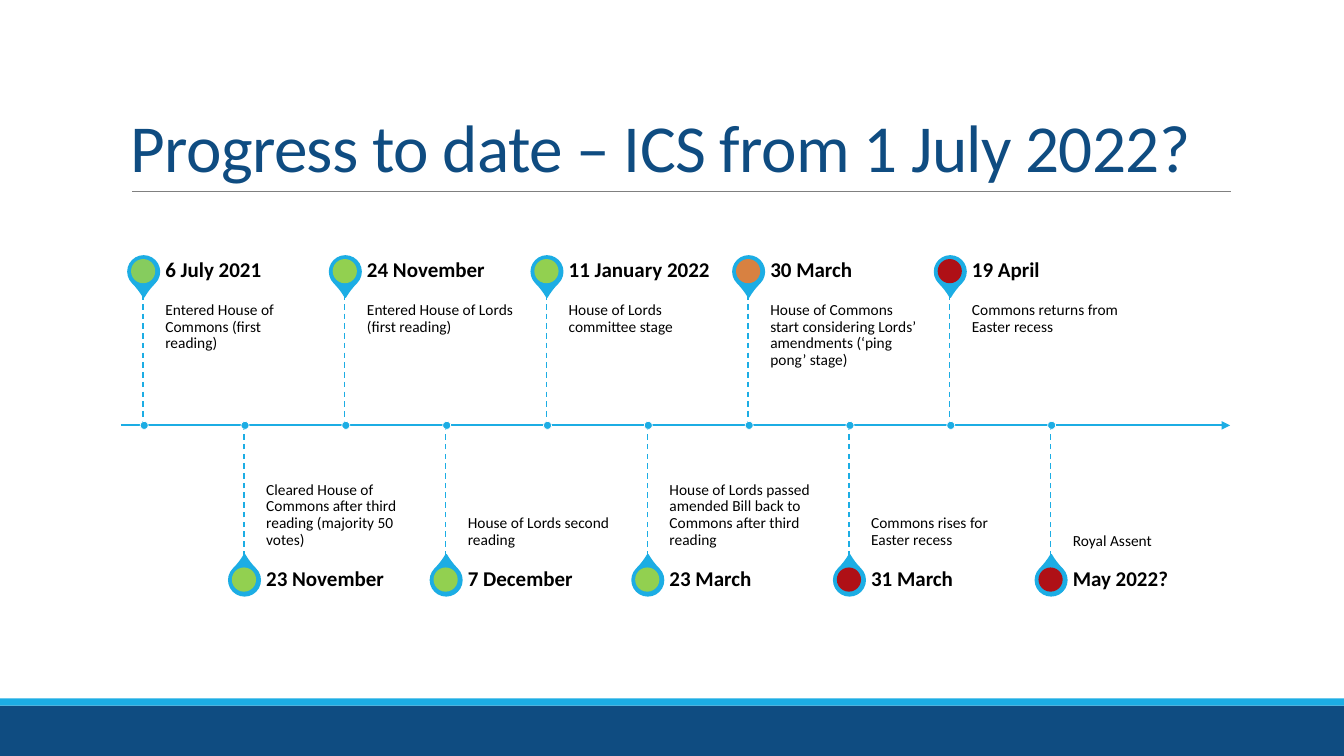
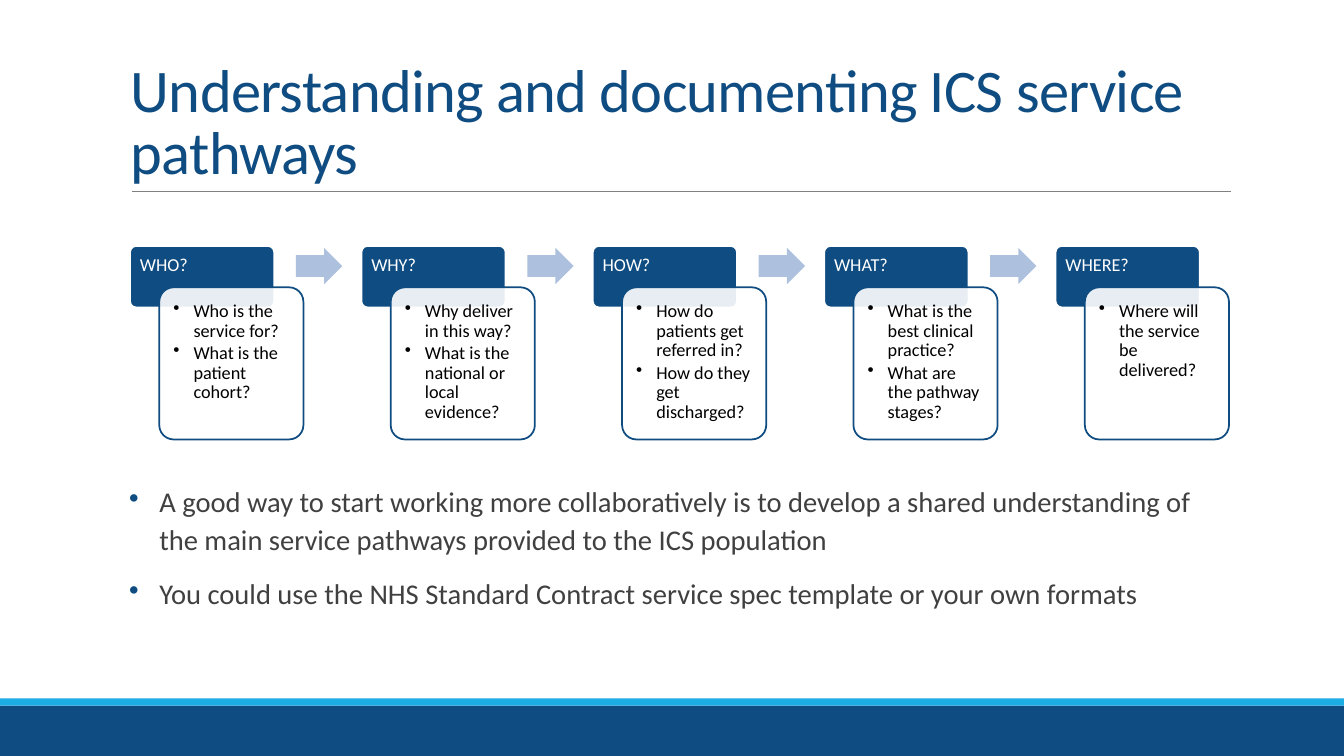
from lxml import etree
from pptx import Presentation
from pptx import util as u
from pptx.dml.color import RGBColor
from pptx.enum import dml, shapes, text
from pptx.oxml import ns

COLORS = {
    "navy": "0F4C81", "sky": "1CADE4", "white": "FFFFFF", "black": "000000",
    "rule": "808080", "body": "404040", "arrow": "ADC1DF",
    "green": "92D050", "orange": "ED7D30", "red": "C00000",
}
FONT = "Calibri"
SHAPE = shapes.MSO_SHAPE
ANCHOR = text.MSO_ANCHOR

MILESTONES = [
    ("6 July 2021", "Entered House of Commons (first reading)", "green", 90),
    ("23 November", "Cleared House of Commons after third reading (majority 50 votes)", "green", 100),
    ("24 November", "Entered House of Lords (first reading)", "green", 100),
    ("7 December", "House of Lords second reading", "green", 100),
    ("11 January 2022", "House of Lords committee stage", "green", 100),
    ("23 March", "House of Lords passed amended Bill back to Commons after third reading", "green", 100),
    ("30 March", "House of Commons start considering Lords’ amendments (‘ping pong’ stage)", "orange", 90),
    ("31 March", "Commons rises for Easter recess", "red", 90),
    ("19 April", "Commons returns from Easter recess", "red", 90),
    ("May 2022?", "Royal Assent", "red", 90),
]

QUESTIONS = [
    ("WHO?", ["Who is the service for?", "What is the patient cohort?"]),
    ("WHY?", ["Why deliver in this way?", "What is the national or local evidence?"]),
    ("HOW?", ["How do patients get referred in?", "How do they get discharged?"]),
    ("WHAT?", ["What is the best clinical practice?", "What are the pathway stages?"]),
    ("WHERE?", ["Where will the service be delivered?"]),
]

ADVICE = [
    "A good way to start working more collaboratively is to develop a shared "
    "understanding of the main service pathways provided to the ICS population",
    "You could use the NHS Standard Contract service spec template or your own formats",
]


def rgb(name):
    return RGBColor.from_string(COLORS[name])


def sub(parent, tag, **attrs):
    return etree.SubElement(parent, ns.qn(tag), **attrs)


class Deck:
    def __init__(self):
        self.prs = Presentation()
        self.prs.slide_width = u.Inches(13.33)
        self.prs.slide_height = u.Inches(7.5)
        self.s = None

    def new_slide(self, title, size):
        self.s = self.prs.slides.add_slide(self.prs.slide_layouts[6])
        self.shape(SHAPE.RECTANGLE, 0, 7, 13.33, 0.5, "navy")
        self.shape(SHAPE.RECTANGLE, 0, 6.93, 13.33, 0.07, "sky")
        self.line(1.31, 1.9, 12.21, 1.9, "rule", 0.5)
        self.textbox(1.2, 0.31, 11, 1.59, [title], size, "navy", anchor=ANCHOR.BOTTOM,
                     insets=(0.1, 0.05, 0.1, 0.05), spacing=0.85, tracking=-50)

    def shape(self, kind, x, y, w, h, fill, line=None, width=1.25, alpha=100, adj=(), rotation=0):
        sp = self.s.shapes.add_shape(kind, *map(u.Inches, (x, y, w, h)))
        sp.shadow.inherit = False
        sp.rotation = rotation
        for i, value in enumerate(adj):
            sp.adjustments[i] = value
        sp.fill.solid()
        sp.fill.fore_color.rgb = rgb(fill)
        if alpha < 100:
            clr = sp._element.spPr.find(ns.qn("a:solidFill")).find(ns.qn("a:srgbClr"))
            sub(clr, "a:alpha", val=str(alpha * 1000))
        if line:
            sp.line.color.rgb = rgb(line)
            sp.line.width = u.Pt(width)
        else:
            sp.line.fill.background()
        return sp

    def line(self, x1, y1, x2, y2, color, width, dashed=False, arrow=False):
        cx = self.s.shapes.add_connector(shapes.MSO_CONNECTOR.STRAIGHT,
                                         *map(u.Inches, (x1, y1, x2, y2)))
        cx.line.color.rgb = rgb(color)
        cx.line.width = u.Pt(width)
        if dashed:
            cx.line.dash_style = dml.MSO_LINE.DASH
        if arrow:
            sub(cx._element.spPr.find(ns.qn("a:ln")), "a:tailEnd", type="triangle")
        sub(cx._element.spPr, "a:effectLst")

    def textbox(self, x, y, w, h, paragraphs, size, color, **style):
        sp = self.s.shapes.add_textbox(*map(u.Inches, (x, y, w, h)))
        self.add_text(sp, paragraphs, size, color, **style)

    def add_text(self, sp, paragraphs, size, color, bold=False, anchor=ANCHOR.TOP,
                 insets=(0, 0, 0, 0), spacing=0.9, after=0, hang=0, bullet=None, tracking=None):
        tf = sp.text_frame
        tf.word_wrap = True
        tf.vertical_anchor = anchor
        tf.margin_left, tf.margin_top, tf.margin_right, tf.margin_bottom = map(u.Inches, insets)
        for i, words in enumerate(paragraphs):
            p = tf.add_paragraph() if i else tf.paragraphs[0]
            if hang:
                self.bullet(p, hang, bullet)
            p.alignment = text.PP_ALIGN.LEFT
            p.line_spacing = spacing
            p.space_after = u.Pt(after)
            r = p.add_run()
            r.text = words
            r.font.name = FONT
            r.font.size = u.Pt(size)
            r.font.bold = bold
            r.font.color.rgb = rgb(color)
            if tracking:
                r._r.get_or_add_rPr().set("spc", str(tracking))

    def bullet(self, p, hang, color):
        pPr = p._p.get_or_add_pPr()
        pPr.set("marL", str(u.Inches(hang)))
        pPr.set("indent", str(-u.Inches(hang)))
        sub(sub(pPr, "a:buClr"), "a:srgbClr", val=COLORS[color])
        sub(pPr, "a:buChar", char="•")

    def milestone(self, x, above, date, event, color, alpha):
        axis = 4.22
        if above:
            pin, date_top, event_top, stem_end = 2.69, 2.46, 2.92, 2.92
            rotation, anchor, insets = 135, ANCHOR.TOP, (0, 0.08, 0.08, 0.11)
        else:
            pin, date_top, event_top, stem_end = 5.75, 5.52, axis, 5.52
            rotation, anchor, insets = 315, ANCHOR.BOTTOM, (0, 0.11, 0, 0.08)
        self.shape(SHAPE.TEAR, x - 0.15, pin - 0.15, 0.31, 0.31, "sky", "sky",
                   adj=[1.15], rotation=rotation)
        self.shape(SHAPE.OVAL, x - 0.12, pin - 0.12, 0.24, 0.24, color, alpha=alpha)
        self.textbox(x + 0.22, event_top, 1.57, 1.3, [event], 11, "black",
                     anchor=anchor, insets=insets)
        self.textbox(x + 0.22, date_top, 1.57, 0.46, [date], 15, "black", bold=True,
                     anchor=ANCHOR.MIDDLE, insets=(0, 0, 0.1, 0))
        self.line(x, stem_end, x, axis, "sky", 1, dashed=True)
        self.shape(SHAPE.OVAL, x - 0.03, axis - 0.04, 0.08, 0.08, "sky", "white", 0.5)

    def question_card(self, x, heading, questions):
        sp = self.shape(SHAPE.ROUNDED_RECTANGLE, x, 2.44, 1.43, 0.61, "navy", "white", adj=[0.1])
        self.add_text(sp, [heading], 13, "white", insets=(0.08, 0.08, 0.08, 0.05))
        sp = self.shape(SHAPE.ROUNDED_RECTANGLE, x + 0.29, 2.85, 1.43, 1.51, "white", "navy",
                        alpha=90, adj=[0.1])
        self.add_text(sp, questions, 13, "black", insets=(0.1,) * 4, after=2, hang=0.2,
                      bullet="black")


def timeline_slide(deck):
    deck.new_slide("Progress to date – ICS from 1 July 2022?", 48)
    deck.line(1.2, 4.22, 12.2, 4.22, "sky", 1.5, arrow=True)
    for i, details in enumerate(MILESTONES):
        deck.milestone(1.42 + i, i % 2 == 0, *details)


def pathways_slide(deck):
    deck.new_slide("Understanding and documenting ICS service pathways", 43.2)
    first, last = 1.29, 10.47
    step = (last - first) / (len(QUESTIONS) - 1)
    for i, (heading, questions) in enumerate(QUESTIONS):
        x = first + i * step
        if i:
            deck.shape(SHAPE.RIGHT_ARROW, x - 0.65, 2.46, 0.46, 0.36, "arrow", adj=[0.6, 0.5])
        deck.question_card(x, heading, questions)
    deck.textbox(1.28, 4.72, 10.92, 1.43, ADVICE, 20.4, "body", insets=(0, 0.05, 0, 0.05),
                 spacing=1.1, after=12, hang=0.3, bullet="navy")


def main():
    deck = Deck()
    timeline_slide(deck)
    pathways_slide(deck)
    deck.prs.save("out.pptx")


if __name__ == "__main__":
    main()
